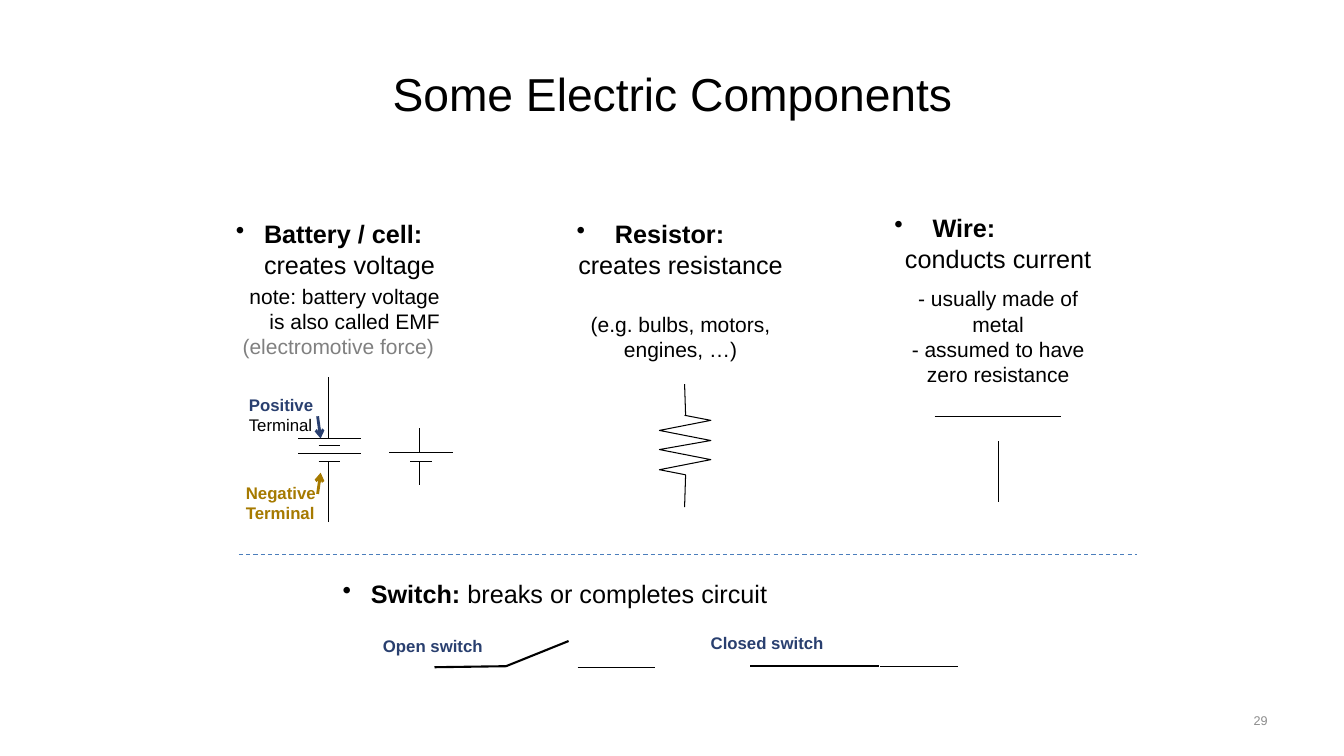
from lxml.etree import SubElement
from pptx import Presentation
from pptx.dml.color import RGBColor
from pptx.enum.dml import MSO_LINE
from pptx.enum.shapes import MSO_CONNECTOR
from pptx.enum.text import MSO_ANCHOR, PP_ALIGN
from pptx.oxml.ns import qn
from pptx.util import Pt

PX = 9144  # EMU in one px, 100 px to the inch
FONT = "Arial"
BLACK, NAVY, GOLD, GRAY, PALE, BLUE = "000000", "293F6F", "A67A00", "808080", "8C8C8C", "4B7EBC"
LEFT, CENTER, RIGHT = PP_ALIGN.LEFT, PP_ALIGN.CENTER, PP_ALIGN.RIGHT
TOP, MIDDLE = MSO_ANCHOR.TOP, MSO_ANCHOR.MIDDLE
WIDE, NARROW = (10, 5), (7, 4)  # side and top margins

# Paragraph: size, alignment, space before in pt, bullet indent in px, runs (text, bold, colour)
# Text: left, top, width, height, margins, anchor, paragraphs
TEXTS = [
    (67, 30, 1200, 125, WIDE, MIDDLE, [
        (33, CENTER, 0, 0, [("Some Electric Components", False, BLACK)])]),
    (224, 212, 222, 156, WIDE, TOP, [
        (18, LEFT, 0, 28, [("Battery / cell:", True, BLACK), (" creates voltage", False, BLACK)]),
        (15, RIGHT, 3, 0, [("note: battery voltage is also called EMF ", False, BLACK),
                           ("(electromotive force) ", False, GRAY)])]),
    (565, 213, 220, 156, NARROW, TOP, [
        (18, LEFT, 0, 38, [("Resistor:", True, BLACK)]),
        (18, CENTER, 0, 0, [("creates resistance", False, BLACK)]),
        (15, CENTER, 23, 0, [("(e.g. bulbs, motors, engines, …)", False, BLACK)])]),
    (880, 207, 220, 188, NARROW, TOP, [
        (18, LEFT, 0, 38, [("Wire:", True, BLACK)]),
        (18, CENTER, 0, 0, [("conducts current", False, BLACK)]),
        (15, CENTER, 9, 0, [("- usually made of metal", False, BLACK)]),
        (15, CENTER, 0, 0, [("- assumed to have zero resistance", False, BLACK)])]),
    (237, 387, 94, 50, WIDE, TOP, [
        (12, LEFT, 0, 0, [("Positive ", True, NAVY), ("Terminal", False, BLACK)])]),
    (234, 474, 103, 50, WIDE, TOP, [
        (12, LEFT, 0, 0, [("Negative Terminal", True, GOLD)])]),
    (330, 569, 670, 40, WIDE, TOP, [
        (18, LEFT, 0, 28, [("Switch:", True, BLACK),
                           (" breaks or completes circuit", False, BLACK)])]),
    (370, 626, 124, 30, WIDE, TOP, [(12, LEFT, 0, 0, [("Open switch", True, NAVY)])]),
    (695, 623, 145, 30, WIDE, TOP, [(12, LEFT, 0, 0, [("Closed switch", True, NAVY)])]),
    (956, 695, 311, 40, WIDE, MIDDLE, [(9, RIGHT, 0, 0, [("29", False, PALE)])]),
]

# Lines: from x, y to x, y
BATTERY = [(296, 435, 358, 435), (316, 442, 337, 442), (296, 450, 358, 450),
           (316, 458, 337, 458), (326, 435, 326, 374), (326, 518, 326, 458)]
CELL = [(386, 449, 449, 449), (407, 458, 428, 458), (416, 449, 416, 425), (416, 481, 416, 458)]
RESISTOR_LEADS = [(680, 412, 679, 381), (679, 503, 680, 471)]
WIRES = [(927, 413, 1052, 413), (990, 438, 990, 498)]
SWITCH_CONTACTS = [(573, 662, 650, 662), (873, 661, 950, 661)]
CLOSED_SWITCH = (744, 661, 872, 661)
DIVIDER = (237, 550, 1128, 550)
ARROWS = [((315, 413, 318, 435), NAVY), ((315, 490, 318, 469), GOLD)]

ZIGZAG = ([(679, 412)] + [(654 if i % 2 else 705, round(417 + 9.8 * i)) for i in range(6)]
          + [(680, 471)])
OPEN_SWITCH = [(431, 662), (502, 661), (564, 636)]


def rgb(color):
    return RGBColor.from_string(color)


def style_font(font, bold, color):
    font.bold = bold
    font.color.rgb = rgb(color)


def add_bullet(paragraph, indent):
    properties = paragraph._p.get_or_add_pPr()
    properties.set("marL", str(indent * PX))
    properties.set("indent", str(-indent * PX))
    bullet = properties.makeelement(qn("a:buChar"), {"char": "•"})
    properties.insert_element_before(bullet, "a:tabLst", "a:defRPr", "a:extLst")


def fill_paragraph(paragraph, size, alignment, space, indent, runs):
    paragraph.alignment = alignment
    paragraph.space_before = Pt(space)
    paragraph.font.name = FONT
    paragraph.font.size = Pt(size)
    if indent:
        add_bullet(paragraph, indent)
    for text, bold, color in runs:
        run = paragraph.add_run()
        run.text = text
        style_font(paragraph.font if len(runs) == 1 else run.font, bold, color)


def add_text(slide, left, top, width, height, margins, anchor, paragraphs):
    shape = slide.shapes.add_textbox(left * PX, top * PX, width * PX, height * PX)
    frame = shape.text_frame
    frame.word_wrap = True
    frame.vertical_anchor = anchor
    frame.margin_left = frame.margin_right = margins[0] * PX
    frame.margin_top = frame.margin_bottom = margins[1] * PX
    for index, content in enumerate(paragraphs):
        paragraph = frame.add_paragraph() if index else frame.paragraphs[0]
        fill_paragraph(paragraph, *content)


def add_line(slide, ends, color=BLACK, width=0.75, dashed=False, arrow=False):
    connector = slide.shapes.add_connector(MSO_CONNECTOR.STRAIGHT, *(end * PX for end in ends))
    connector.line.color.rgb = rgb(color)
    connector.line.width = Pt(width)
    if dashed:
        connector.line.dash_style = MSO_LINE.DASH
    properties = connector._element.spPr
    if arrow:
        SubElement(properties.find(qn("a:ln")), qn("a:tailEnd"), type="arrow")
    SubElement(properties, qn("a:effectLst"))


def add_outline(slide, points, width):
    builder = slide.shapes.build_freeform(*points[0], scale=PX)
    builder.add_line_segments(points[1:], close=False)
    shape = builder.convert_to_shape()
    shape.shadow.inherit = False
    shape.fill.background()
    shape.line.color.rgb = rgb(BLACK)
    shape.line.width = Pt(width)


def main():
    presentation = Presentation()
    presentation.slide_width = 1333 * PX
    presentation.slide_height = 750 * PX
    slide = presentation.slides.add_slide(presentation.slide_layouts[6])
    for text in TEXTS:
        add_text(slide, *text)
    for ends in BATTERY + CELL + RESISTOR_LEADS + WIRES + SWITCH_CONTACTS:
        add_line(slide, ends)
    for ends, color in ARROWS:
        add_line(slide, ends, color, width=2, arrow=True)
    add_line(slide, DIVIDER, BLUE, dashed=True)
    add_line(slide, CLOSED_SWITCH, width=1.5)
    add_outline(slide, ZIGZAG, 0.75)
    add_outline(slide, OPEN_SWITCH, 1.5)
    presentation.save("out.pptx")


if __name__ == "__main__":
    main()
